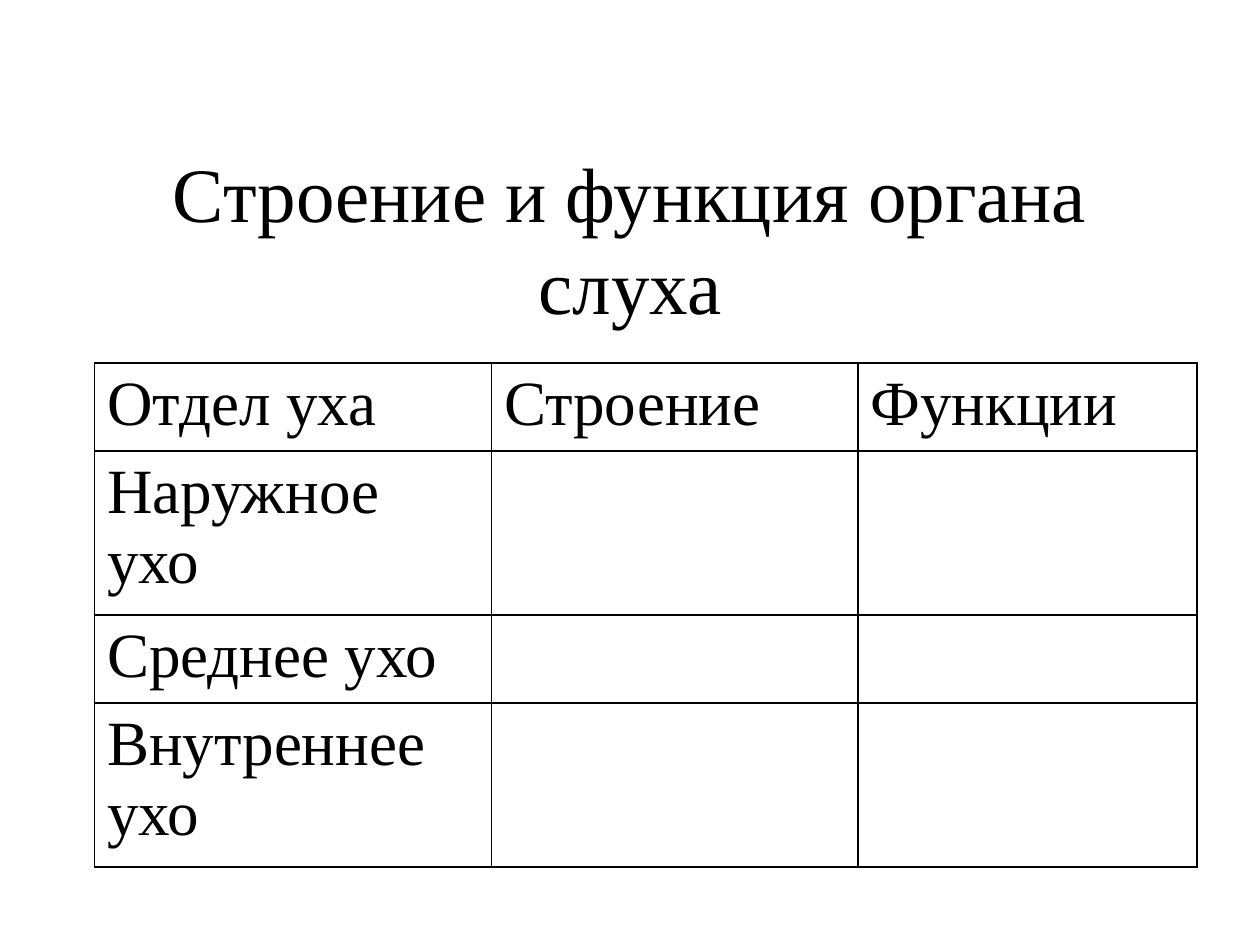
from lxml.etree import SubElement
from pptx import Presentation
from pptx.dml.color import RGBColor
from pptx.enum.text import MSO_ANCHOR, PP_ALIGN
from pptx.oxml.ns import qn
from pptx.util import Inches, Pt

FONT = "Times New Roman"
INK = "000000"
TITLE = "Строение и функция органа слуха"
HEADINGS = ["Отдел уха", "Строение", "Функции"]
EAR_PARTS = ["Наружное ухо", "Среднее ухо", "Внутреннее ухо"]
COLUMN_WIDTHS = [3.15, 2.91, 2.69]
ONE_LINE, TWO_LINES = 0.65, 1.21
ROW_HEIGHTS = [ONE_LINE, TWO_LINES, ONE_LINE, TWO_LINES]


def color(hex_string):
    return RGBColor.from_string(hex_string)


def style_text(frame, size):
    for para in frame.paragraphs:
        para.font.size = Pt(size)
        for span in para.runs:
            span.font.name = FONT
            span.font.size = Pt(size)
            span.font.color.rgb = color(INK)


def add_title(page, left, top, width, height):
    box = page.shapes.add_textbox(*map(Inches, (left, top, width, height)))
    frame = box.text_frame
    frame.word_wrap = True
    frame.vertical_anchor = MSO_ANCHOR.BOTTOM
    frame.margin_left = frame.margin_right = Inches(0.2)
    frame.margin_bottom = Inches(0.11)
    frame.text = TITLE
    frame.paragraphs[0].alignment = PP_ALIGN.CENTER
    style_text(frame, 44)


def add_borders(cell, width):
    properties = cell._tc.get_or_add_tcPr()
    for side in ("lnL", "lnR", "lnT", "lnB"):
        line = SubElement(properties, qn(f"a:{side}"), w=str(Pt(width)))
        fill = SubElement(line, qn("a:solidFill"))
        SubElement(fill, qn("a:srgbClr"), val=INK)


def add_ear_table(page, left, top, width, height):
    rows = [HEADINGS] + [[part, "", ""] for part in EAR_PARTS]
    table = page.shapes.add_table(
        len(rows), len(HEADINGS), *map(Inches, (left, top, width, height))
    ).table
    table.first_row = table.horz_banding = False
    for column, share in zip(table.columns, COLUMN_WIDTHS):
        column.width = Inches(width * share / sum(COLUMN_WIDTHS))
    for row, texts, share in zip(table.rows, rows, ROW_HEIGHTS):
        row.height = Inches(height * share / sum(ROW_HEIGHTS))
        for cell, text in zip(row.cells, texts):
            add_borders(cell, 1)
            cell.fill.background()
            cell.text_frame.text = text
            style_text(cell.text_frame, 36)


def main():
    deck = Presentation()
    deck.slide_width, deck.slide_height = Inches(10), Inches(7.5)
    page = deck.slides.add_slide(deck.slide_layouts[6])
    add_title(page, 0.5, 0.3, 9, 2.43)
    add_ear_table(page, 0.75, 2.88, sum(COLUMN_WIDTHS), sum(ROW_HEIGHTS))
    deck.save("out.pptx")


if __name__ == "__main__":
    main()
